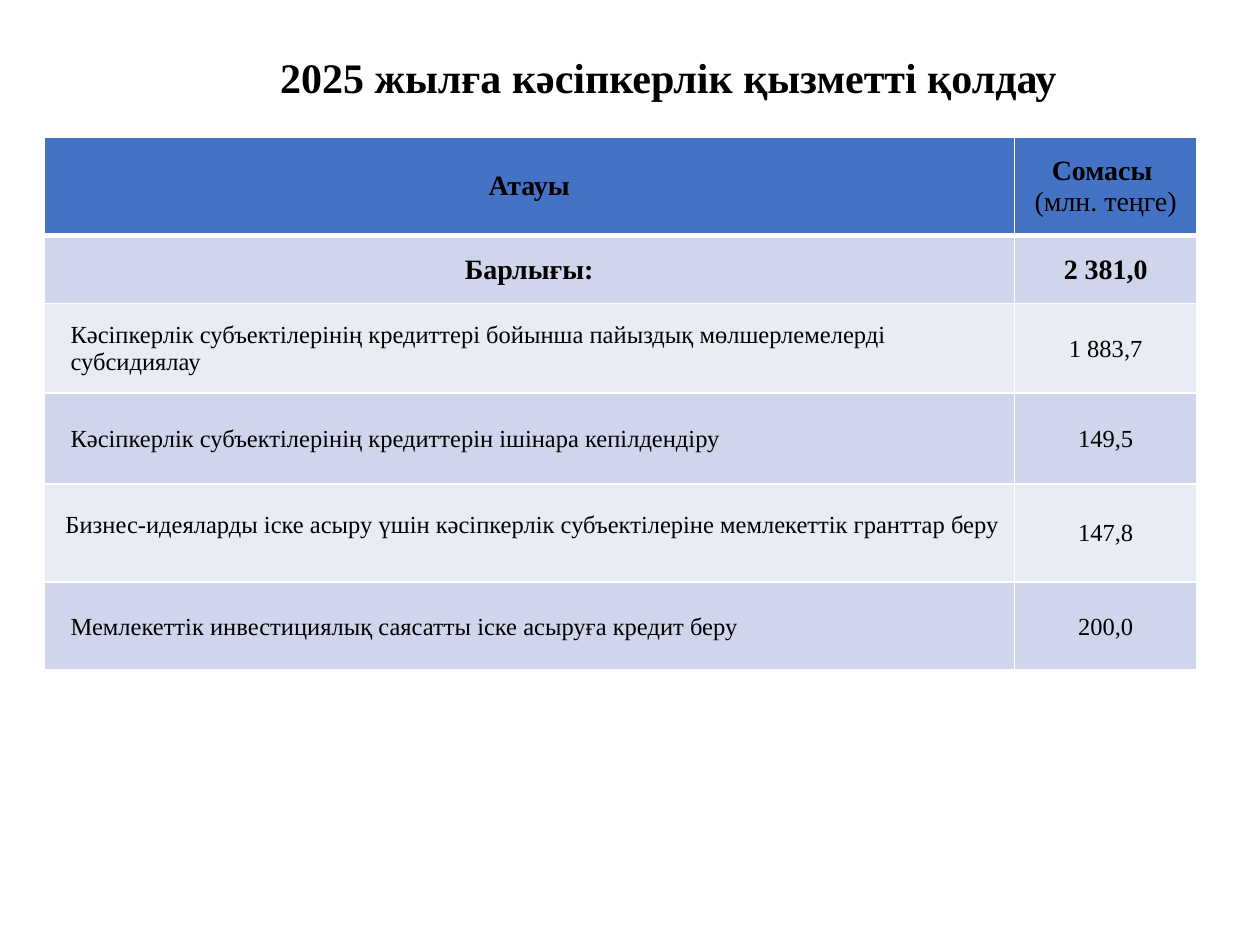
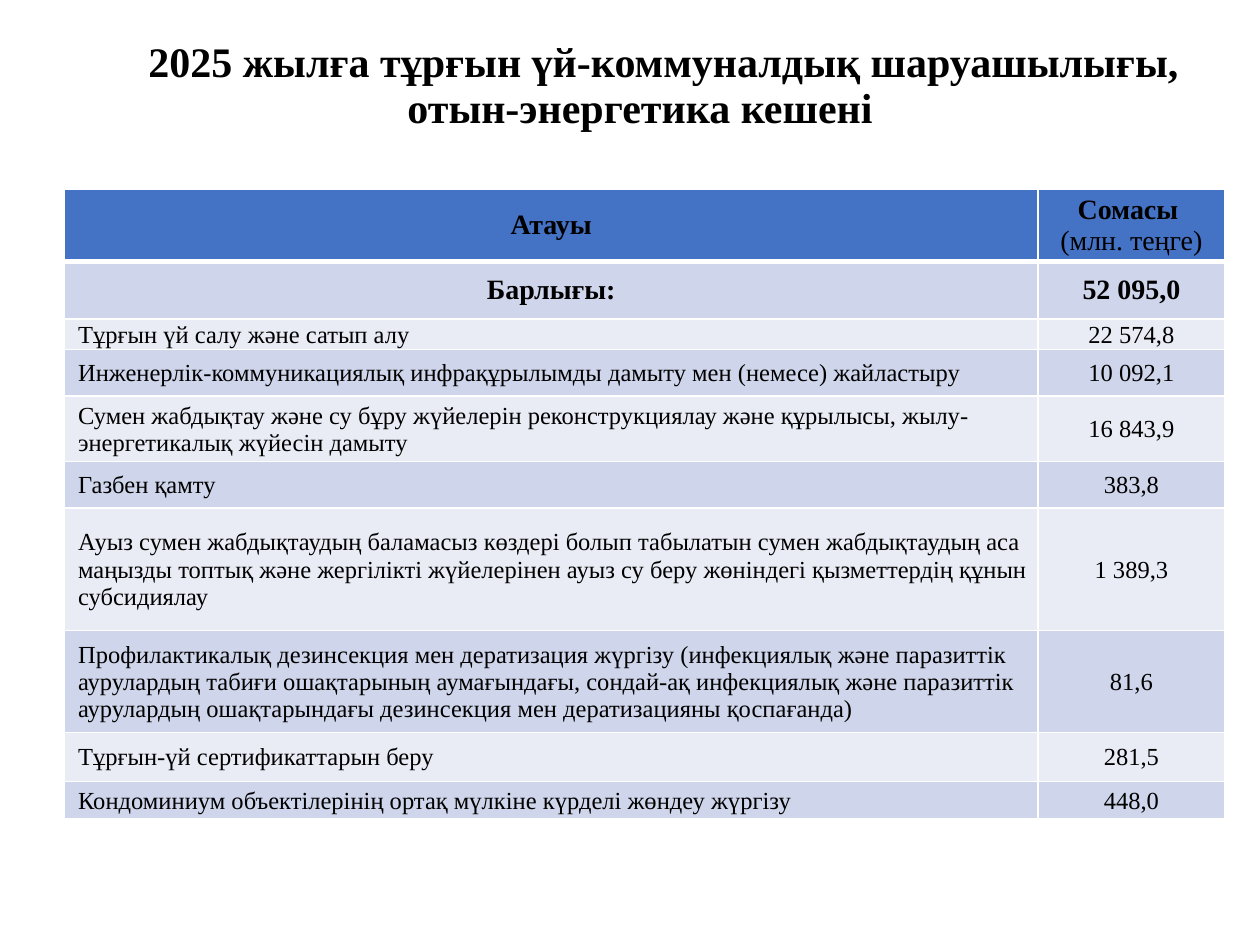
"""Build two budget slides, each with a title and a table of amounts."""
from lxml import etree
from pptx import Presentation
from pptx import util as u
from pptx.dml.color import RGBColor
from pptx.enum import text
from pptx.oxml import ns

FONT = "Times New Roman"
COLOURS = {"ink": "000000", "header": "4472C4", "odd": "CFD5EA",
           "even": "E9EBF5", "border": "FFFFFF"}
HEADINGS = ("Атауы", "Сомасы \n(млн. теңге)")
TOTAL = "Барлығы:"
HEAD_INSETS = ((0, 0, 0, 0), (0.07, 0.04, 0.07, 0.04))
BODY_INSETS = (0.01, 0.01, 0.01, 0)
GRANT_INSETS = (0.07, 0.22, 0.07, 0)
GRANTS = "Бизнес-идеяларды іске асыру үшін кәсіпкерлік субъектілеріне мемлекеттік гранттар беру"

SLIDES = [
    {
        "title": "2025 жылға кәсіпкерлік қызметті қолдау",
        "title_at": (0.66, 0.18, 8.92, 0.9),
        "table_at": (0.35, 1.09),
        "columns": (7.7, 1.45),
        "head_heights": (0.78, 0.54),
        "indent": 0.2,
        "total": "2 381,0",
        "items": [
            ("Кәсіпкерлік субъектілерінің кредиттері бойынша пайыздық мөлшерлемелерді субсидиялау",
             "1 883,7", 0.71),
            ("Кәсіпкерлік субъектілерінің кредиттерін ішінара кепілдендіру", "149,5", 0.72),
            (GRANTS, "147,8", 0.78),
            ("Мемлекеттік инвестициялық саясатты іске асыруға кредит беру", "200,0", 0.7),
        ],
    },
    {
        "title": "2025 жылға тұрғын үй-коммуналдық шаруашылығы, отын-энергетика кешені",
        "title_at": (0.55, 0.23, 9.06, 0.92),
        "table_at": (0.51, 1.5),
        "columns": (7.73, 1.48),
        "head_heights": (0.54, 0.46),
        "indent": 0.1,
        "total": "52 095,0",
        "items": [
            ("Тұрғын үй салу және сатып алу", "22 574,8", 0.24),
            ("Инженерлік-коммуникациялық инфрақұрылымды дамыту мен (немесе) жайластыру",
             "10 092,1", 0.37),
            ("Сумен жабдықтау және су бұру жүйелерін реконструкциялау және құрылысы, "
             "жылу-энергетикалық жүйесін дамыту", "16 843,9", 0.52),
            ("Газбен қамту", "383,8", 0.37),
            ("Ауыз сумен жабдықтаудың баламасыз көздерi болып табылатын сумен жабдықтаудың аса "
             "маңызды топтық және жергілікті жүйелерiнен ауыз су беру жөніндегі қызметтердің "
             "құнын субсидиялау", "1 389,3", 0.97),
            ("Профилактикалық дезинсекция мен дератизация жүргізу (инфекциялық және паразиттік "
             "аурулардың табиғи ошақтарының аумағындағы, сондай-ақ инфекциялық және паразиттік "
             "аурулардың ошақтарындағы дезинсекция мен дератизацияны қоспағанда)", "81,6", 0.81),
            ("Тұрғын-үй сертификаттарын беру", "281,5", 0.39),
            ("Кондоминиум объектілерінің ортақ мүлкіне күрделі жөндеу жүргізу", "448,0", 0.3),
        ],
    },
]


def write(frame, words, size=14, bold=(False,), centred=True, margin=0, indent=0, spacing=1.0):
    """Fill a text frame, one paragraph a line; bold has one flag for each line."""
    lines = words.split("\n")
    for number, (line, weight) in enumerate(zip(lines, bold)):
        para = frame.add_paragraph() if number else frame.paragraphs[0]
        para.alignment = text.PP_ALIGN.CENTER if centred else text.PP_ALIGN.LEFT
        para.line_spacing = spacing
        properties = para._p.get_or_add_pPr()
        properties.set("marL", str(u.Inches(margin)))
        properties.set("indent", str(u.Inches(indent)))
        span = para.add_run()
        span.text = line
        span.font.name = FONT
        span.font.size = u.Pt(size)
        span.font.bold = weight
        span.font.color.rgb = RGBColor.from_string(COLOURS["ink"])


def set_insets(holder, insets):
    """Set the left, top, right and bottom margins of a cell or text frame."""
    for side, inset in zip(("left", "top", "right", "bottom"), insets):
        setattr(holder, f"margin_{side}", u.Inches(inset))


def style_cell(cell, row, insets):
    """Set borders, fill, margins and anchor of a cell."""
    properties = cell._tc.get_or_add_tcPr()
    thick_side = {0: "B", 1: "T"}.get(row)
    for side in "LRTB":
        line = etree.SubElement(properties, ns.qn(f"a:ln{side}"))
        line.set("w", str(u.Pt(3 if side == thick_side else 1)))
        fill = etree.SubElement(line, ns.qn("a:solidFill"))
        etree.SubElement(fill, ns.qn("a:srgbClr")).set("val", COLOURS["border"])
    shade = "header" if row == 0 else "odd" if row % 2 else "even"
    cell.fill.solid()
    cell.fill.fore_color.rgb = RGBColor.from_string(COLOURS[shade])
    set_insets(cell, insets)
    cell.vertical_anchor = text.MSO_ANCHOR.MIDDLE


def add_title(page, content):
    title = page.shapes.title
    title.left, title.top, title.width, title.height = map(u.Inches, content["title_at"])
    frame = title.text_frame
    frame.vertical_anchor = text.MSO_ANCHOR.MIDDLE
    set_insets(frame, (0.07, 0.04, 0.07, 0.04))
    write(frame, content["title"], size=24, bold=(True,), indent=0.37, spacing=0.9)


def add_amounts(page, content):
    head = [HEADINGS, (TOTAL, content["total"])]
    items = content["items"]
    heights = [*content["head_heights"], *(height for _, _, height in items)]
    columns = content["columns"]
    left, top = content["table_at"]
    table = page.shapes.add_table(
        len(heights), len(columns), u.Inches(left), u.Inches(top),
        u.Inches(sum(columns)), u.Inches(sum(heights))).table
    for column, width in zip(table.columns, columns):
        column.width = u.Inches(width)
    for row, height in zip(table.rows, heights):
        row.height = u.Inches(height)

    for row, labels in enumerate(head):
        for column, label in enumerate(labels):
            cell = table.cell(row, column)
            style_cell(cell, row, HEAD_INSETS[column])
            write(cell.text_frame, label, size=16, bold=(True, False))

    for row, (name, amount, _) in enumerate(items, len(head)):
        name_cell, amount_cell = table.cell(row, 0), table.cell(row, 1)
        is_grant = name == GRANTS
        style_cell(name_cell, row, GRANT_INSETS if is_grant else BODY_INSETS)
        if is_grant:
            name_cell.vertical_anchor = text.MSO_ANCHOR.TOP
        write(name_cell.text_frame, name, centred=False,
              margin=0.1 if is_grant else content["indent"])
        style_cell(amount_cell, row, BODY_INSETS)
        write(amount_cell.text_frame, amount)


def main():
    deck = Presentation()
    deck.slide_width, deck.slide_height = u.Inches(10), u.Inches(7.5)
    for content in SLIDES:
        page = deck.slides.add_slide(deck.slide_layouts.get_by_name("Title Only"))
        add_title(page, content)
        add_amounts(page, content)
    deck.save("out.pptx")


if __name__ == "__main__":
    main()
